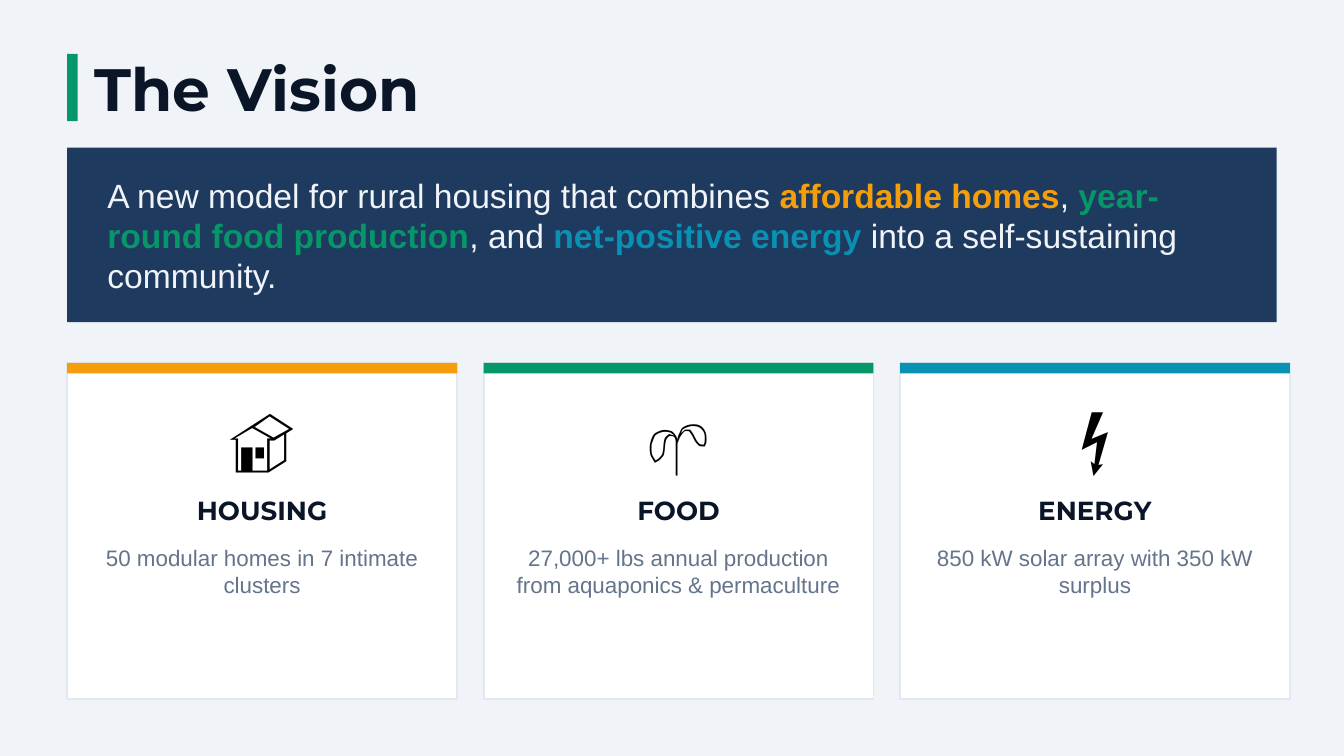
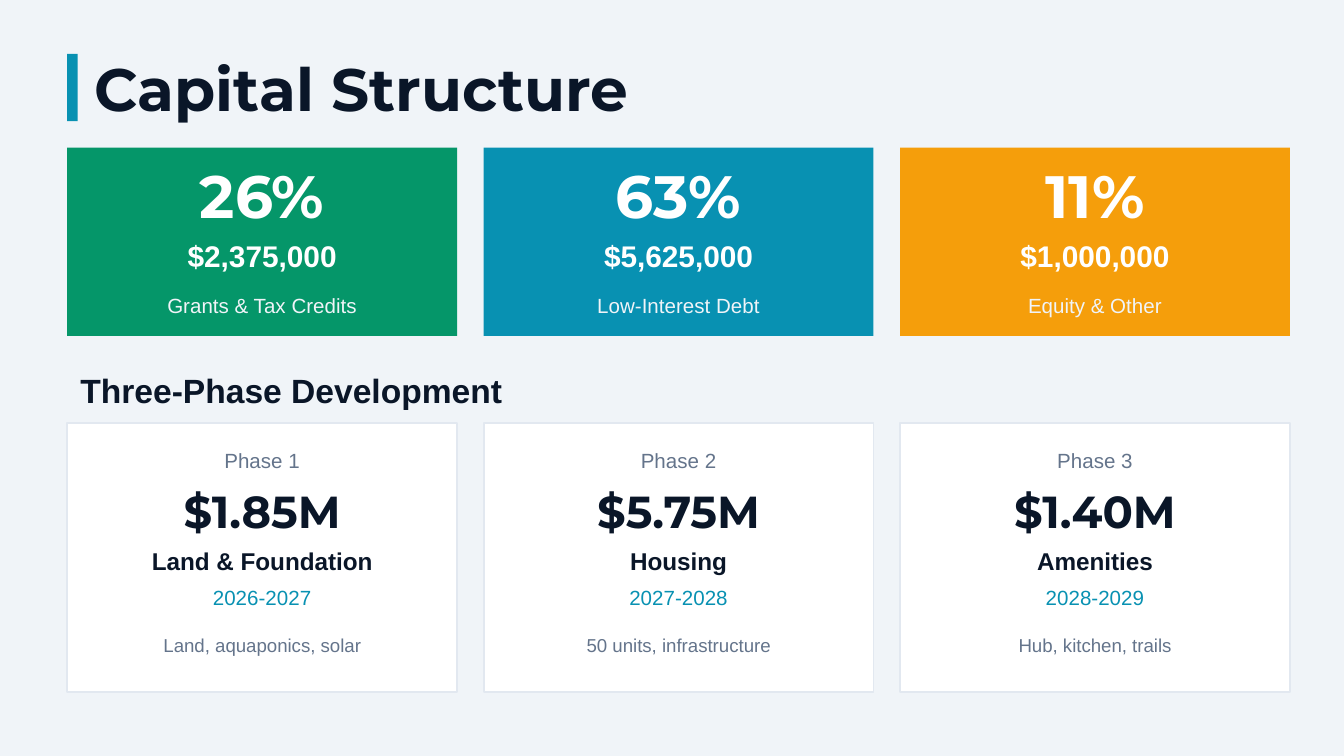
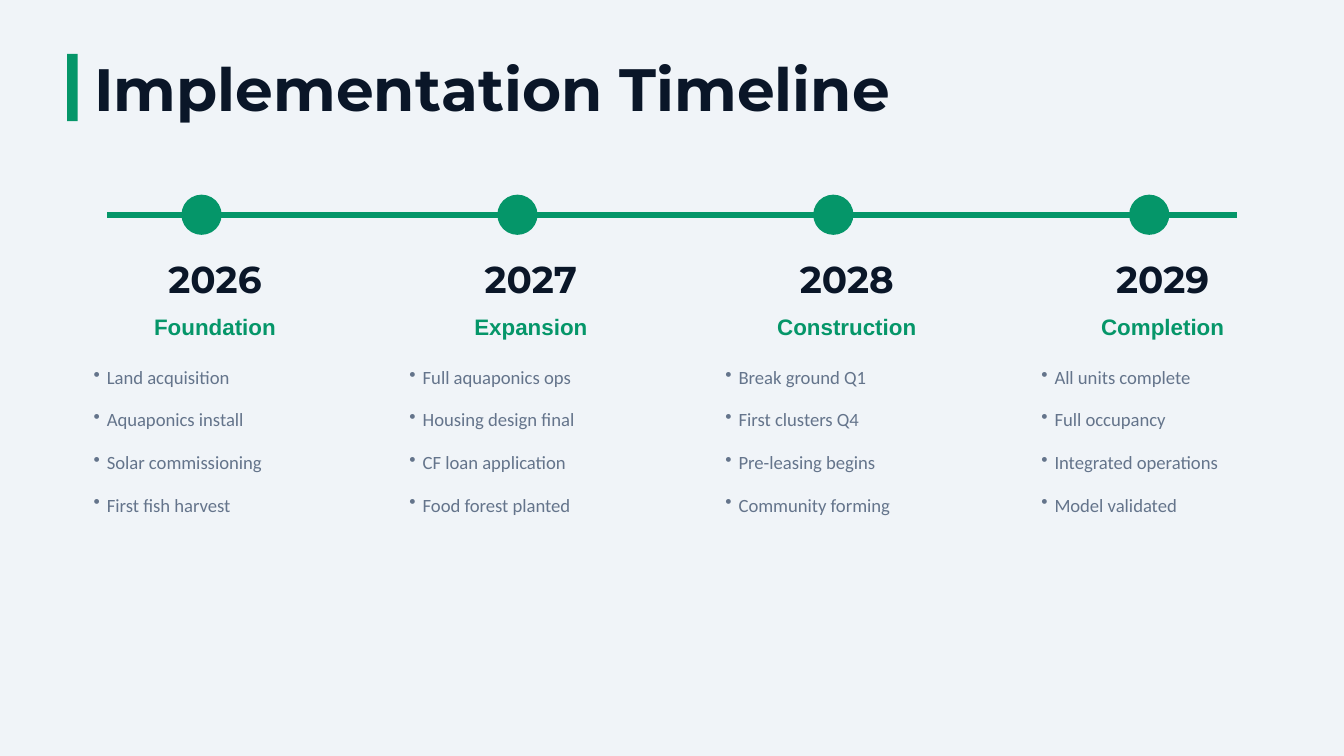
from lxml.etree import SubElement
from pptx import Presentation
from pptx.dml.color import RGBColor
from pptx.enum.shapes import MSO_CONNECTOR, MSO_SHAPE
from pptx.enum.text import MSO_ANCHOR, PP_ALIGN
from pptx.oxml.ns import qn
from pptx.util import Cm, Pt

PAPER, WHITE, EDGE = "F0F4F8", "FFFFFF", "E2E8F0"
INK, NAVY, GREY = "0A1628", "1E3A5F", "64748B"
GREEN, BLUE, AMBER = "059669", "0891B2", "F59E0B"
HEAD, BODY, LIST = "Montserrat", "Arial", "Calibri"

LEFT, CARD_W, CARD_STEP = 1.27, 7.37, 7.87
PAD = 0.25
YEAR_W, YEAR_STEP, DOT = 5.59, 5.97, 0.76
LINE_Y = 4.06

PILLARS = [
    ("🏠", "HOUSING", "50 modular homes in 7 intimate clusters", AMBER),
    ("🌱", "FOOD", "27,000+ lbs annual production from aquaponics & permaculture", GREEN),
    ("⚡", "ENERGY", "850 kW solar array with 350 kW surplus", BLUE),
]
SOURCES = [
    ("26%", "$2,375,000", "Grants & Tax Credits", GREEN),
    ("63%", "$5,625,000", "Low-Interest Debt", BLUE),
    ("11%", "$1,000,000", "Equity & Other", AMBER),
]
PHASES = [
    ("Phase 1", "$1.85M", "Land & Foundation", "2026-2027", "Land, aquaponics, solar"),
    ("Phase 2", "$5.75M", "Housing", "2027-2028", "50 units, infrastructure"),
    ("Phase 3", "$1.40M", "Amenities", "2028-2029", "Hub, kitchen, trails"),
]
YEARS = [
    ("2026", "Foundation", ["Land acquisition", "Aquaponics install",
                            "Solar commissioning", "First fish harvest"]),
    ("2027", "Expansion", ["Full aquaponics ops", "Housing design final",
                           "CF loan application", "Food forest planted"]),
    ("2028", "Construction", ["Break ground Q1", "First clusters Q4",
                              "Pre-leasing begins", "Community forming"]),
    ("2029", "Completion", ["All units complete", "Full occupancy",
                            "Integrated operations", "Model validated"]),
]


def rgb(value):
    """Turn a hex string into a colour."""
    return RGBColor.from_string(value)


def style(font, name, size, color, bold=False):
    """Set the face, size, colour and weight of a font."""
    font.name, font.size, font.bold = name, Pt(size), bold
    font.color.rgb = rgb(color)


def add_block(s, x, y, w, h, fill, line=None, kind=MSO_SHAPE.RECTANGLE):
    """Add a flat filled shape, outlined only when a line colour is given."""
    sp = s.shapes.add_shape(kind, Cm(x), Cm(y), Cm(w), Cm(h))
    sp.shadow.inherit = False
    sp.fill.solid()
    sp.fill.fore_color.rgb = rgb(fill)
    if line:
        sp.line.color.rgb = rgb(line)
        sp.line.width = Pt(1)
    else:
        sp.line.fill.background()


def add_frame(s, x, y, w, h, anchor=MSO_ANCHOR.MIDDLE):
    """Add a wrapping text box and return its text frame."""
    tf = s.shapes.add_textbox(Cm(x), Cm(y), Cm(w), Cm(h)).text_frame
    tf.word_wrap = True
    tf.vertical_anchor = anchor
    return tf


def add_label(s, x, y, w, h, text, name, size, color, bold=False,
              align=PP_ALIGN.CENTER, anchor=MSO_ANCHOR.MIDDLE):
    """Add a text box in a single style and return its text frame."""
    tf = add_frame(s, x, y, w, h, anchor)
    tf.text = text
    p = tf.paragraphs[0]
    p.alignment = align
    style(p.runs[0].font, name, size, color, bold)
    return tf


def add_bullets(s, x, y, w, h, items):
    """Add an evenly spaced bulleted list."""
    tf = add_frame(s, x, y, w, h)
    tf.text = "\n".join(items)
    for i, p in enumerate(tf.paragraphs):
        pPr = p._p.get_or_add_pPr()
        pPr.set("marL", str(Cm(0.25)))
        pPr.set("indent", str(-Cm(0.25)))
        SubElement(pPr, qn("a:buChar")).set("char", "•")
        if i:
            p.space_before = Pt(10.8)
        style(p.runs[0].font, LIST, 10, GREY)


def add_line(s, x1, x2, y, color, width):
    """Add a flat horizontal line."""
    c = s.shapes.add_connector(MSO_CONNECTOR.STRAIGHT, Cm(x1), Cm(y), Cm(x2), Cm(y))
    c.line.color.rgb = rgb(color)
    c.line.width = Pt(width)
    SubElement(c._element.spPr, qn("a:effectLst"))


def new_slide(prs, title, accent):
    """Add a slide with the shared background, accent bar and title."""
    s = prs.slides.add_slide(prs.slide_layouts[6])
    s.background.fill.solid()
    s.background.fill.fore_color.rgb = rgb(PAPER)
    add_block(s, LEFT, 1.02, 0.2, 1.27, accent)
    tf = add_label(s, 1.78, 0.89, 20.32, 1.52, title, HEAD, 32, INK, True, PP_ALIGN.LEFT)
    tf.margin_left = tf.margin_right = tf.margin_top = tf.margin_bottom = 0
    return s


def add_statement(s, parts):
    """Add the navy band with its sentence of coloured parts."""
    add_block(s, LEFT, 2.79, 22.86, 3.3, NAVY)
    p = add_frame(s, 1.78, 3.05, 21.84, 2.79).paragraphs[0]
    for text, color in parts:
        r = p.add_run()
        r.text = text
        style(r.font, BODY, 18, color, color != PAPER)


def add_pillar(s, x, icon, name, detail, color):
    """Add a white card with a coloured top edge, icon, name and detail."""
    inner = CARD_W - 2 * PAD
    add_block(s, x, 6.86, CARD_W, 6.35, WHITE, EDGE)
    add_block(s, x, 6.86, CARD_W, 0.2, color)
    add_label(s, x, 7.37, CARD_W, 1.78, icon, LIST, 36, "000000")
    add_label(s, x + PAD, 9.14, inner, 1.02, name, HEAD, 14, INK, True)
    add_label(s, x + PAD, 10.16, inner, 2.54, detail, BODY, 12, GREY, anchor=MSO_ANCHOR.TOP)


def add_source(s, x, share, amount, name, color):
    """Add a coloured tile for one source of capital."""
    add_block(s, x, 2.79, CARD_W, 3.56, color)
    add_label(s, x, 2.92, CARD_W, 1.52, share, HEAD, 32, WHITE, True)
    add_label(s, x, 4.32, CARD_W, 1.02, amount, BODY, 16, WHITE, True)
    add_label(s, x, 5.33, CARD_W, 0.89, name, BODY, 11, PAPER)


def add_phase(s, x, phase, cost, name, dates, scope):
    """Add a white card for one development phase."""
    add_block(s, x, 8, CARD_W, 5.08, WHITE, EDGE)
    add_label(s, x, 8.26, CARD_W, 0.89, phase, BODY, 11, GREY)
    add_label(s, x, 9.02, CARD_W, 1.27, cost, HEAD, 24, INK, True)
    add_label(s, x, 10.16, CARD_W, 0.89, name, BODY, 13, INK, True)
    add_label(s, x, 10.92, CARD_W, 0.76, dates, BODY, 11, BLUE)
    add_label(s, x + PAD, 11.68, CARD_W - 2 * PAD, 1.02, scope, BODY, 10, GREY)


def add_year(s, x, year, stage, steps):
    """Add one timeline stop with its dot, year, stage and steps."""
    add_block(s, x + 2.16, LINE_Y - DOT / 2, DOT, DOT, GREEN, kind=MSO_SHAPE.OVAL)
    add_label(s, x, 4.7, YEAR_W, 1.14, year, HEAD, 20, INK, True)
    add_label(s, x, 5.72, YEAR_W, 0.89, stage, BODY, 12, GREEN, True)
    add_bullets(s, x + PAD, 6.73, 5.08, 3.2, steps)


def add_row(s, add_item, items, step):
    """Place items side by side at an equal step."""
    for i, item in enumerate(items):
        add_item(s, LEFT + i * step, *item)


def main():
    """Build and save the three slides."""
    prs = Presentation()
    prs.slide_width, prs.slide_height = Cm(25.4), Cm(14.29)

    s = new_slide(prs, "The Vision", GREEN)
    add_statement(s, [
        ("A new model for rural housing that combines ", PAPER),
        ("affordable homes", AMBER),
        (", ", PAPER),
        ("year-round food production", GREEN),
        (", and ", PAPER),
        ("net-positive energy", BLUE),
        (" into a self-sustaining community.", PAPER),
    ])
    add_row(s, add_pillar, PILLARS, CARD_STEP)

    s = new_slide(prs, "Capital Structure", BLUE)
    add_row(s, add_source, SOURCES, CARD_STEP)
    add_label(s, LEFT, 6.86, 22.86, 1.02, "Three-Phase Development",
              BODY, 18, INK, True, PP_ALIGN.LEFT)
    add_row(s, add_phase, PHASES, CARD_STEP)

    s = new_slide(prs, "Implementation Timeline", GREEN)
    add_line(s, 2.03, 23.37, LINE_Y, GREEN, 3)
    add_row(s, add_year, YEARS, YEAR_STEP)

    prs.save("out.pptx")


if __name__ == "__main__":
    main()
